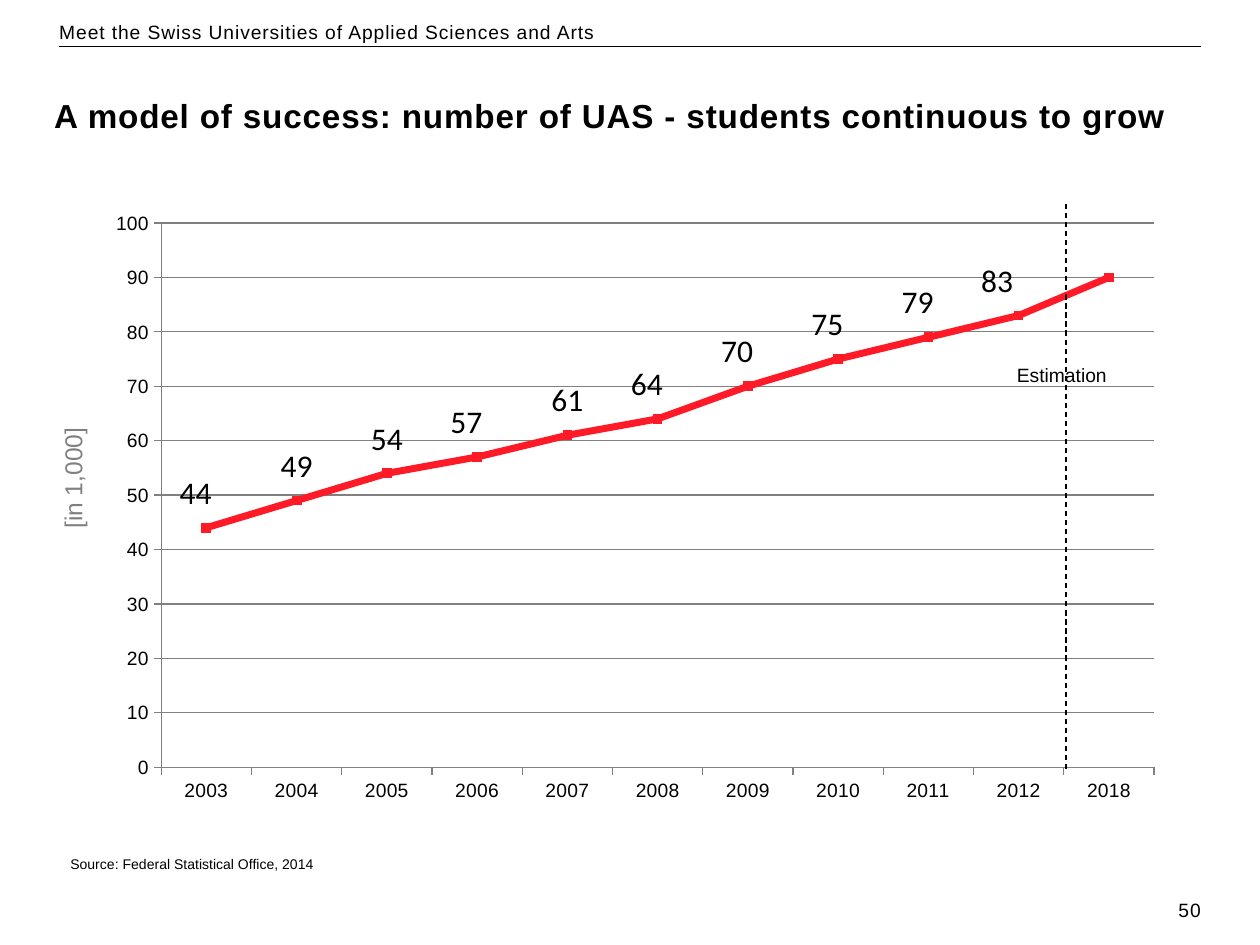
from dataclasses import dataclass

from lxml import etree
from pptx import Presentation, util as u
from pptx.chart.data import CategoryChartData
from pptx.dml.color import RGBColor
from pptx.enum import chart as ch, dml, shapes, text
from pptx.oxml import ns


@dataclass(frozen=True)
class Theme:
    font: str = "Arial"
    label: str = "Calibri"
    ink: RGBColor = RGBColor(0, 0, 0)
    grey: RGBColor = RGBColor(0x80, 0x80, 0x80)
    red: RGBColor = RGBColor(0xFF, 0x1A, 0x27)
    title: int = 19
    value: int = 18
    unit: int = 14
    body: int = 11
    note: int = 8


theme = Theme()


def write(box, words, size, color=theme.ink, bold=False, lead=None, inset=0):
    """Fill a text shape; a lead (line height in points) also spaces the letters."""
    frame = box.text_frame
    frame.word_wrap = True
    frame.vertical_anchor = text.MSO_ANCHOR.TOP
    frame.margin_left = frame.margin_right = u.Inches(inset)
    frame.margin_top = frame.margin_bottom = u.Inches(inset / 2)
    frame.text = words
    para = frame.paragraphs[0]
    para.alignment = text.PP_ALIGN.LEFT
    run = para.runs[0]
    run.font.name, run.font.size, run.font.bold = theme.font, u.Pt(size), bold
    run.font.color.rgb = color
    if lead:
        para.line_spacing = u.Pt(lead)
        run.font._element.set("spc", "50")
    return para


def rule(x1, y1, x2, y2, width):
    line = slide.shapes.add_connector(
        shapes.MSO_CONNECTOR.STRAIGHT, *map(u.Inches, (x1, y1, x2, y2)))
    line.line.color.rgb = theme.ink
    line.line.width = u.Pt(width)
    etree.SubElement(line._element.spPr, ns.qn("a:effectLst"))
    return line


prs = Presentation()
prs.slide_width, prs.slide_height = u.Inches(10), u.Inches(7.5)
slide = prs.slides.add_slide(prs.slide_layouts[5])
add_box = slide.shapes.add_textbox

# Header and title
rule(0.47, 0.37, 9.53, 0.37, 0.6)
head = add_box(*map(u.Inches, (0.47, 0.16, 9.06, 0.37)))
write(head, "Meet the Swiss Universities of Applied Sciences and Arts",
      theme.body, lead=13.2)
title = slide.shapes.title
title.left, title.top, title.width, title.height = map(
    u.Inches, (0.43, 0.76, 9.06, 0.42))
write(title, "A model of success: number of UAS - students continuous to grow",
      theme.title, bold=True, lead=22.8)
page = add_box(*map(u.Inches, (8.94, 7.13, 0.59, 0.2)))
write(page, "50", theme.body, lead=13.2).alignment = text.PP_ALIGN.RIGHT

# Student numbers
data = CategoryChartData()
data.categories = [str(year) for year in range(2003, 2013)] + ["2018"]
data.add_series("Series 1", (44, 49, 54, 57, 61, 64, 70, 75, 79, 83, 90))
left, top, wide, high = 0.75, 1.58, 8.58, 4.88
chart = slide.shapes.add_chart(
    ch.XL_CHART_TYPE.LINE_MARKERS,
    *map(u.Inches, (left, top, wide, high)), data).chart
chart.has_legend = chart.has_title = False
chart.font.name, chart.font.size = theme.label, u.Pt(theme.value)
chart.font.color.rgb = theme.ink

for axis in (chart.category_axis, chart.value_axis):
    axis.major_tick_mark = ch.XL_TICK_MARK.OUTSIDE
    axis.minor_tick_mark = ch.XL_TICK_MARK.NONE
    axis.format.line.color.rgb = theme.grey
    axis.tick_labels.font.name = theme.font
    axis.tick_labels.font.size = u.Pt(theme.body)
    axis.tick_labels.font.color.rgb = theme.ink
scale = chart.value_axis
scale.minimum_scale, scale.maximum_scale, scale.major_unit = 0, 100, 10
scale.has_major_gridlines = True
scale.major_gridlines.format.line.color.rgb = theme.grey

plot = chart.plots[0]
plot.vary_by_categories = False
curve = plot.series[0]
curve.smooth = False
curve.format.line.color.rgb = theme.red
curve.format.line.width = u.Pt(4)
mark = curve.marker
mark.style, mark.size = ch.XL_MARKER_STYLE.SQUARE, 5
mark.format.fill.solid()
mark.format.fill.fore_color.rgb = theme.red
mark.format.line.color.rgb = theme.red


def place(node, index, **values):
    """Insert a manual layout, given in parts of the chart size."""
    layout = etree.Element(ns.qn("c:layout"))
    manual = etree.SubElement(layout, ns.qn("c:manualLayout"))
    for name, value in values.items():
        etree.SubElement(manual, ns.qn("c:" + name)).set("val", str(value))
    node.insert(index, layout)


# Labels above the points, nudged off the curve; the estimate has none
curve.data_labels.show_value = False
shifts = (-0.01, 0, 0, -0.01, 0, -0.01, -0.01, -0.01, -0.01, -0.02)
for index in range(len(shifts)):
    label = curve.points[index].data_label
    label.font.name, label.font.size = theme.label, u.Pt(theme.value)
    label.font.color.rgb = theme.ink
    label.position = ch.XL_LABEL_POSITION.ABOVE
for node, shift in zip(chart.element.xpath(".//c:dLbl"), shifts):
    place(node, 1, x=shift, y=-0.01)

area = chart.element.xpath(".//c:plotArea")[0]
for old in area.findall(ns.qn("c:layout")):
    area.remove(old)
place(area, 0, layoutTarget="inner", xMode="edge", yMode="edge",
      x=(1.28 - left) / wide, y=(1.77 - top) / high,
      w=7.88 / wide, h=4.32 / high)

# Notes around the chart
rule(8.46, 1.62, 8.46, 6.11, 0.75).line.dash_style = dml.MSO_LINE.DASH
guess = add_box(*map(u.Inches, (8.07, 2.88, 1.1, 0.19)))
write(guess, "Estimation", theme.body)
unit = add_box(*map(u.Inches, (0.46, 1.47, 0.31, 4.65)))
write(unit, "[in 1,000]", theme.unit, theme.grey).alignment = text.PP_ALIGN.CENTER
unit.text_frame._txBody.bodyPr.set("vert", "vert270")
source = add_box(*map(u.Inches, (0.46, 6.74, 2.16, 0.24)))
write(source, "Source: Federal Statistical Office, 2014", theme.note, inset=0.1)
source.text_frame.word_wrap = False

prs.save("out.pptx")
